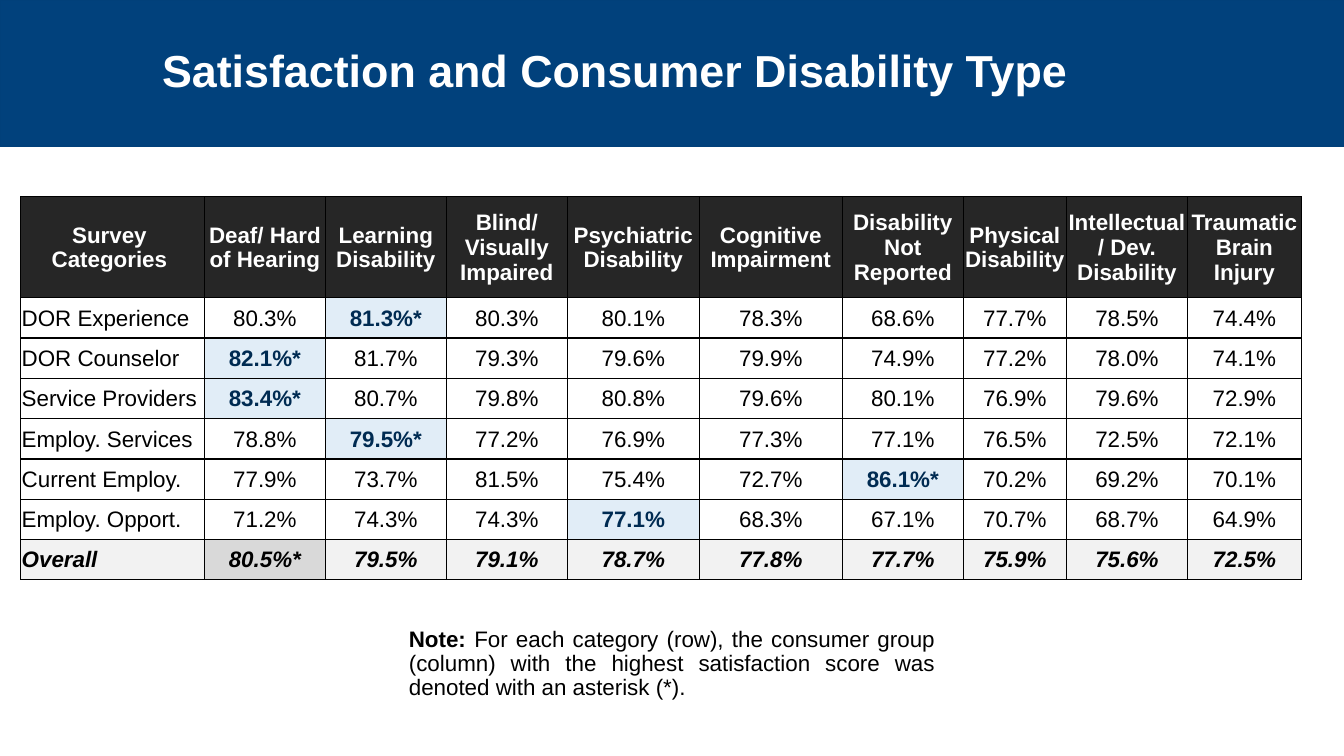
import pptx
import pptx.dml.color
import pptx.enum.shapes
import pptx.enum.text
import pptx.oxml
import pptx.oxml.ns
import pptx.util

Pt = pptx.util.Pt
ALIGN = pptx.enum.text.PP_ALIGN
MIDDLE = pptx.enum.text.MSO_ANCHOR.MIDDLE

TITLE = "Satisfaction and Consumer Disability Type"
NOTE_LABEL = "Note: "
NOTE = ("For each category (row), the consumer group (column) with the highest "
        "satisfaction score was denoted with an asterisk (*).")
CORNER = ["Survey ", "Categories "]
GROUPS = [
    ("Deaf/ Hard of Hearing", 86.4),
    ("Learning Disability", 86.4),
    ("Blind/ Visually Impaired", 86.4),
    ("Psychiatric Disability", 94.3),
    ("Cognitive Impairment", 102.2),
    ("Disability Not Reported", 86.4),
    ("Physical Disability", 73.6),
    ("Intellectual/ Dev. Disability", 86.6),
    ("Traumatic Brain Injury", 81.2),
]
SCORES = [
    ("DOR Experience", "80.3% 81.3%* 80.3% 80.1% 78.3% 68.6% 77.7% 78.5% 74.4%"),
    ("DOR Counselor", "82.1%* 81.7% 79.3% 79.6% 79.9% 74.9% 77.2% 78.0% 74.1%"),
    ("Service Providers", "83.4%* 80.7% 79.8% 80.8% 79.6% 80.1% 76.9% 79.6% 72.9%"),
    ("Employ. Services", "78.8% 79.5%* 77.2% 76.9% 77.3% 77.1% 76.5% 72.5% 72.1%"),
    ("Current Employ.", "77.9% 73.7% 81.5% 75.4% 72.7% 86.1%* 70.2% 69.2% 70.1%"),
    ("Employ. Opport.", "71.2% 74.3% 74.3% 77.1% 68.3% 67.1% 70.7% 68.7% 64.9%"),
    ("Overall", "80.5%* 79.5% 79.1% 78.7% 77.8% 77.7% 75.9% 75.6% 72.5%"),
]
CATEGORY_WIDTH = 131.2
HEADER_HEIGHT, SCORE_HEIGHT = 72, 28.8


def color(value):
    return pptx.dml.color.RGBColor.from_string(value)


def add_run(paragraph, text, size, ink, bold=False, italic=False):
    run = paragraph.add_run()
    run.text = text
    run.font.name = "Arial"
    run.font.size = Pt(size)
    run.font.bold = bold
    run.font.italic = italic
    run.font.color.rgb = color(ink)


def add_text_area(left, top, width, height):
    frame = slide.shapes.add_textbox(Pt(left), Pt(top), Pt(width), Pt(height)).text_frame
    frame.word_wrap = True
    frame.paragraphs[0].line_spacing = 0.9
    return frame


def add_borders(cell):
    properties = cell._tc.get_or_add_tcPr()
    for side in ("lnL", "lnR", "lnT", "lnB"):
        properties.append(pptx.oxml.parse_xml(
            f'<a:{side} {pptx.oxml.ns.nsdecls("a")} w="12700"><a:solidFill>'
            f'<a:srgbClr val="000000"/></a:solidFill></a:{side}>'))


def fill_cell(cell, lines, fill, ink="000000", bold=False, italic=False, align=ALIGN.CENTER):
    cell.margin_left = cell.margin_right = cell.margin_top = Pt(0.75)
    cell.margin_bottom = Pt(0)
    cell.vertical_anchor = MIDDLE
    add_borders(cell)
    cell.fill.solid()
    cell.fill.fore_color.rgb = color(fill)
    for index, line in enumerate(lines):
        frame = cell.text_frame
        paragraph = frame.add_paragraph() if index else frame.paragraphs[0]
        paragraph.alignment = align
        add_run(paragraph, line, 16, ink, bold, italic)


deck = pptx.Presentation()
deck.slide_width, deck.slide_height = Pt(960), Pt(540)
slide = deck.slides.add_slide(deck.slide_layouts[6])

banner = slide.shapes.add_shape(
    pptx.enum.shapes.MSO_SHAPE.RECTANGLE, Pt(0), Pt(0), Pt(960), Pt(104.4))
banner.shadow.inherit = False
banner.fill.solid()
banner.fill.fore_color.rgb = color("01417C")
banner.line.color.rgb = color("01407A")
banner.line.width = Pt(1)

title = add_text_area(108.7, 0, 851.3, 104.4)
title.vertical_anchor = MIDDLE
add_run(title.paragraphs[0], TITLE, 32, "FFFFFF", bold=True)

widths = [CATEGORY_WIDTH] + [width for _, width in GROUPS]
heights = [HEADER_HEIGHT] + [SCORE_HEIGHT] * len(SCORES)
satisfaction = slide.shapes.add_table(
    len(heights), len(widths), Pt(14.8), Pt(140.6), Pt(sum(widths)), Pt(sum(heights))).table
for column, width in zip(satisfaction.columns, widths):
    column.width = Pt(width)
for row, height in zip(satisfaction.rows, heights):
    row.height = Pt(height)

for column, heading in enumerate([CORNER] + [[group] for group, _ in GROUPS]):
    fill_cell(satisfaction.cell(0, column), heading, "262626", "FFFFFF", bold=True)

for row, (category, line) in enumerate(SCORES, 1):
    scores = line.split()
    highest = max(scores, key=lambda score: float(score.rstrip("%*")))
    overall = category == "Overall"
    plain, marked = ("F2F2F2", "D9D9D9") if overall else ("FFFFFF", "E1EDF7")
    fill_cell(satisfaction.cell(row, 0), [category], plain,
              bold=overall, italic=overall, align=ALIGN.LEFT)
    for column, score in enumerate(scores, 1):
        best = score == highest
        fill_cell(satisfaction.cell(row, column), [score], marked if best else plain,
                  "002B52" if best and not overall else "000000",
                  bold=best or overall, italic=overall)

note = add_text_area(285, 445, 390, 82.8).paragraphs[0]
note.alignment = ALIGN.JUSTIFY
add_run(note, NOTE_LABEL, 16, "000000", bold=True)
add_run(note, NOTE, 16, "000000")

deck.save("out.pptx")
